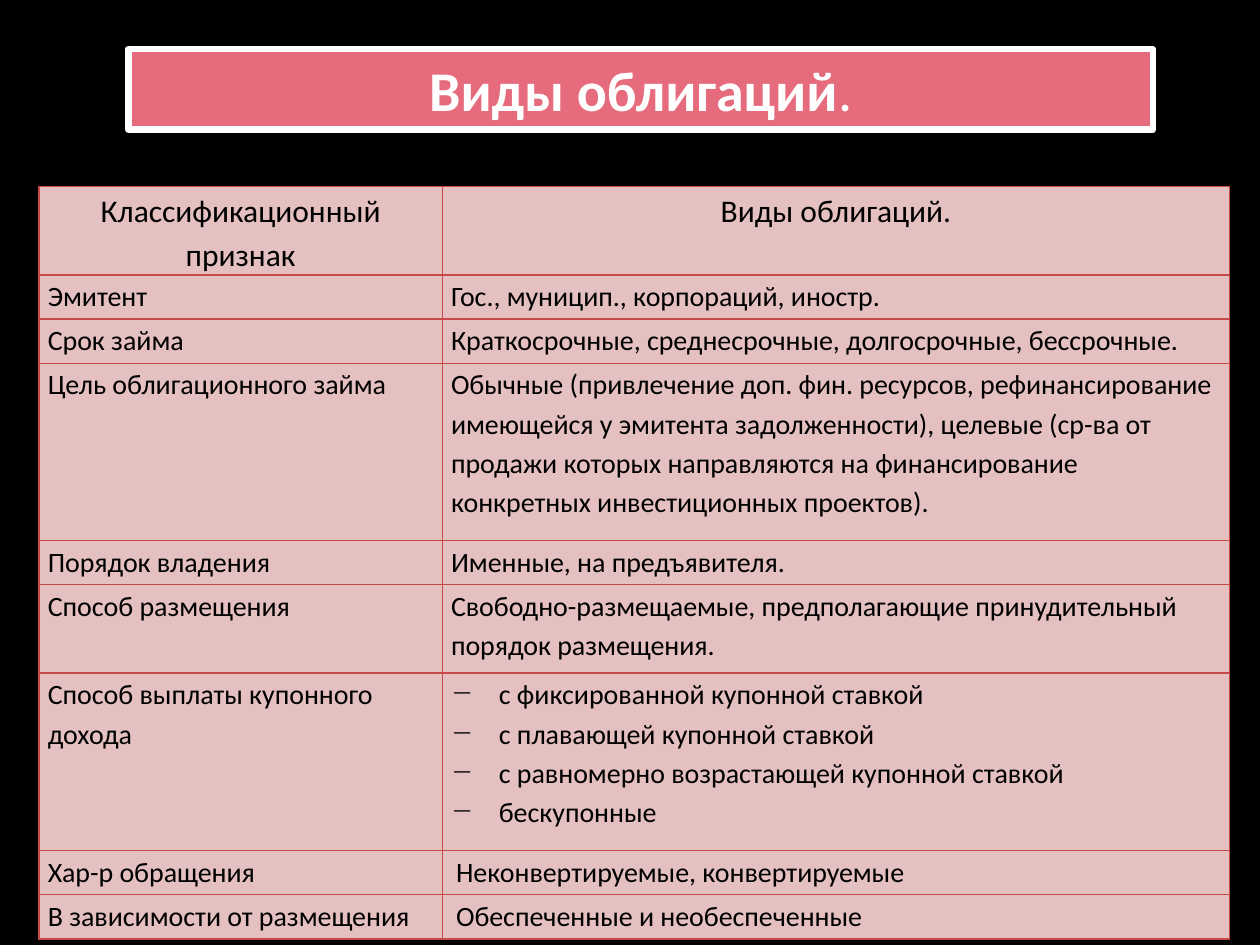
from dataclasses import dataclass
from typing import Any

from lxml import etree
from pptx import Presentation, util as u
from pptx.dml.color import RGBColor
from pptx.enum import shapes, text
from pptx.oxml import ns


@dataclass(frozen=True)
class Theme:
    font: str = "Calibri"
    background: str = "000000"
    title_fill: str = "E66C7D"
    title_text: str = "FFFFFF"
    cell_fill: str = "E4C0C0"
    cell_text: str = "000000"
    border: str = "C64847"
    title_size: float = 32
    header_size: float = 18
    body_size: float = 16
    title_line: float = 3.75
    border_width: float = 0.79


@dataclass(frozen=True)
class Row:
    feature: str
    kinds: tuple[str, ...]
    height: float = 0.35
    margin: float = 0
    bullet: str = ""
    header: bool = False


THEME = Theme()
COLUMN_WIDTHS = (3.2, 6.25)
BULLET_INDENT = 0.38
BULLET_TAB = 0.29
ROWS = (
    Row("Классификационный признак", ("Виды облигаций.",), 0.69, header=True),
    Row("Эмитент", ("Гос., муницип., корпораций, иностр.",)),
    Row("Срок займа", ("Краткосрочные, среднесрочные, долгосрочные, бессрочные.",)),
    Row(
        "Цель облигационного займа",
        (
            "Обычные (привлечение доп. фин. ресурсов, рефинансирование "
            "имеющейся у эмитента задолженности), целевые (ср-ва от продажи "
            "которых направляются на финансирование конкретных "
            "инвестиционных проектов).",
        ),
        1.41,
    ),
    Row("Порядок владения", ("Именные, на предъявителя.",)),
    Row(
        "Способ размещения",
        ("Свободно-размещаемые, предполагающие принудительный порядок размещения.",),
        0.7,
    ),
    Row(
        "Способ выплаты купонного дохода",
        (
            "с фиксированной купонной ставкой",
            "с плавающей купонной ставкой",
            "с равномерно возрастающей купонной ставкой",
            "бескупонные",
        ),
        1.41,
        bullet="−",
    ),
    Row("Хар-р обращения", ("Неконвертируемые, конвертируемые",), margin=0.04),
    Row("В зависимости от размещения", ("Обеспеченные и необеспеченные",), margin=0.04),
)


def apply_format(target: Any, values: dict[str, Any]) -> None:
    for name, value in values.items():
        setattr(target, name, value)


def add_run(paragraph: Any, content: str, size: float, color: str, bold: bool = False) -> None:
    run = paragraph.add_run()
    run.text = content
    apply_format(run.font, {"name": THEME.font, "size": u.Pt(size), "bold": bold})
    run.font.color.rgb = RGBColor.from_string(color)


def add_title(slide: Any) -> None:
    shape = slide.shapes.add_shape(
        shapes.MSO_SHAPE.RECTANGLE,
        u.Inches(1.02), u.Inches(0.39), u.Inches(8.13), u.Inches(0.64),
    )
    shape.shadow.inherit = False
    shape.fill.solid()
    shape.fill.fore_color.rgb = RGBColor.from_string(THEME.title_fill)
    shape.line.color.rgb = RGBColor.from_string(THEME.title_text)
    shape.line.width = u.Pt(THEME.title_line)
    apply_format(
        shape.text_frame,
        {"word_wrap": True, "vertical_anchor": text.MSO_ANCHOR.MIDDLE},
    )
    paragraph = shape.text_frame.paragraphs[0]
    paragraph.alignment = text.PP_ALIGN.CENTER
    add_run(paragraph, "Виды облигаций", THEME.title_size, THEME.title_text, True)
    add_run(paragraph, ".", THEME.title_size, THEME.title_text)


def add_borders(cell: Any) -> None:
    properties = cell._tc.get_or_add_tcPr()
    for side in ("lnL", "lnR", "lnT", "lnB"):
        line = etree.SubElement(
            properties, ns.qn(f"a:{side}"), w=str(int(u.Pt(THEME.border_width)))
        )
        fill = etree.SubElement(line, ns.qn("a:solidFill"))
        etree.SubElement(fill, ns.qn("a:srgbClr"), val=THEME.border)


def add_indent(paragraph: Any, margin: float, bullet: str) -> None:
    properties = paragraph._p.get_or_add_pPr()
    if bullet:
        indent = u.Inches(BULLET_INDENT)
        properties.set("marL", str(int(indent)))
        properties.set("indent", str(-int(indent)))
        etree.SubElement(properties, ns.qn("a:buChar"), char=bullet)
        tabs = etree.SubElement(properties, ns.qn("a:tabLst"))
        etree.SubElement(
            tabs, ns.qn("a:tab"), pos=str(int(u.Inches(BULLET_TAB))), algn="l"
        )
    elif margin:
        properties.set("marL", str(int(u.Inches(margin))))
        properties.set("indent", "0")


def fill_cell(
    cell: Any, lines: tuple[str, ...], header: bool, margin: float = 0, bullet: str = ""
) -> None:
    apply_format(
        cell,
        {
            "margin_left": u.Inches(0.07),
            "margin_right": u.Inches(0.07),
            "margin_top": 0,
            "margin_bottom": 0,
        },
    )
    add_borders(cell)
    cell.fill.solid()
    cell.fill.fore_color.rgb = RGBColor.from_string(THEME.cell_fill)
    frame = cell.text_frame
    for index, line in enumerate(lines):
        paragraph = frame.add_paragraph() if index else frame.paragraphs[0]
        paragraph.line_spacing = 1.15
        paragraph.alignment = text.PP_ALIGN.CENTER if header else text.PP_ALIGN.LEFT
        add_indent(paragraph, margin, bullet)
        size = THEME.header_size if header else THEME.body_size
        add_run(paragraph, line, size, THEME.cell_text)


def add_bond_table(slide: Any) -> None:
    table = slide.shapes.add_table(
        len(ROWS), len(COLUMN_WIDTHS),
        u.Inches(0.31), u.Inches(1.48),
        u.Inches(sum(COLUMN_WIDTHS)), u.Inches(sum(row.height for row in ROWS)),
    ).table
    apply_format(table, {"first_row": False, "horz_banding": False})
    for column, width in zip(table.columns, COLUMN_WIDTHS):
        column.width = u.Inches(width)
    for index, row in enumerate(ROWS):
        table.rows[index].height = u.Inches(row.height)
        fill_cell(table.cell(index, 0), (row.feature,), row.header)
        fill_cell(table.cell(index, 1), row.kinds, row.header, row.margin, row.bullet)


def main() -> None:
    presentation = Presentation()
    apply_format(
        presentation, {"slide_width": u.Inches(10), "slide_height": u.Inches(7.5)}
    )
    slide = presentation.slides.add_slide(presentation.slide_layouts[6])
    slide.background.fill.solid()
    slide.background.fill.fore_color.rgb = RGBColor.from_string(THEME.background)
    add_title(slide)
    add_bond_table(slide)
    presentation.save("out.pptx")


if __name__ == "__main__":
    main()
